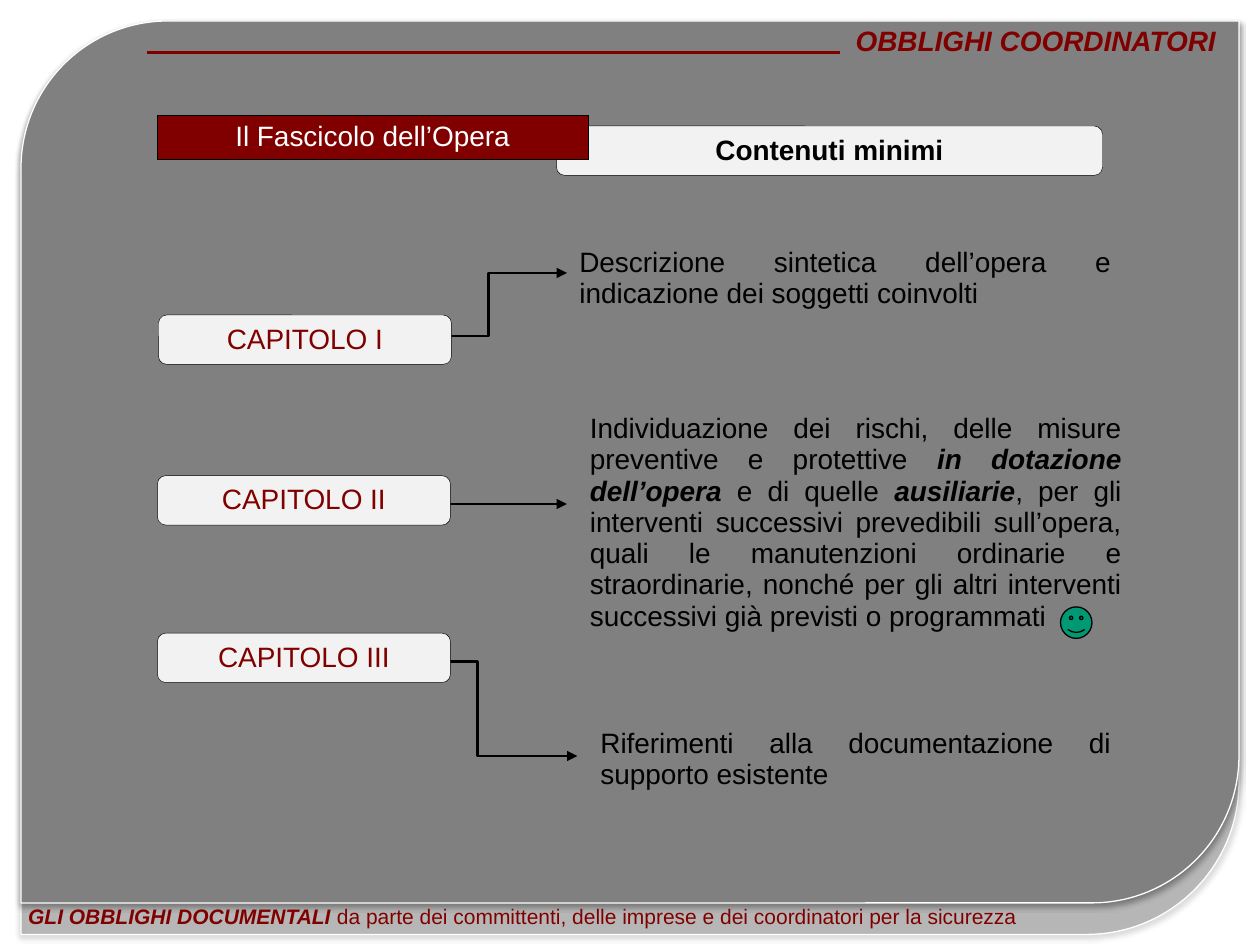
from lxml import etree
from pptx import Presentation
from pptx.dml.color import RGBColor
from pptx.enum.shapes import MSO_CONNECTOR as LINK, MSO_SHAPE as SHAPE
from pptx.enum.text import MSO_ANCHOR as ANCHOR, MSO_AUTO_SIZE as AUTO, PP_ALIGN as ALIGN
from pptx.oxml import parse_xml
from pptx.oxml.ns import nsdecls, qn
from pptx.util import Inches, Pt

CELL = Inches(1) // 12  # grid of 120 columns by 90 rows
RED, BLACK, WHITE, PALE, GREY = "800000", "000000", "FFFFFF", "F2F2F2", "808080"

presentation = Presentation()
presentation.slide_width, presentation.slide_height = 120 * CELL, 90 * CELL
slide = presentation.slides.add_slide(presentation.slide_layouts[6])
shapes = slide.shapes


def add_block(kind, box, fill=None, line=BLACK, width=0.25):
    """Add a preset shape, or a text box when kind is None, at grid units."""
    frame = [round(value * CELL) for value in box]
    if kind is None:
        return shapes.add_textbox(*frame)
    shape = shapes.add_shape(kind, *frame)
    shape.shadow.inherit = False
    shape.fill.solid()
    shape.fill.fore_color.rgb = RGBColor.from_string(fill)
    shape.line.color.rgb = RGBColor.from_string(line)
    shape.line.width = Pt(width)
    return shape


def write(shape, parts, color, size=16, align=ALIGN.CENTER, anchor=ANCHOR.MIDDLE):
    """Fill a shape with one paragraph of (text, bold, italic) parts."""
    text_frame = shape.text_frame
    text_frame.word_wrap = True
    text_frame.auto_size = AUTO.SHAPE_TO_FIT_TEXT
    text_frame.vertical_anchor = anchor
    paragraph = text_frame.paragraphs[0]
    paragraph.alignment = align
    paragraph.line_spacing = 0.93
    for text, bold, italic in parts:
        run = paragraph.add_run()
        run.text = text
        run.font.name, run.font.size = "Arial", Pt(size)
        run.font.bold, run.font.italic = bold, italic
        run.font.color.rgb = RGBColor.from_string(color)


# Background panels with soft shadows, the rear one translucent
for rows, opacity in [(87, 40), (84, 100)]:
    panel = add_block(SHAPE.ROUND_2_DIAG_RECTANGLE, (2, 2, 116, rows), GREY, WHITE, 0.75)
    fill_color = panel._element.spPr.find(qn("a:solidFill"))[0]
    etree.SubElement(fill_color, qn("a:alpha")).set("val", str(opacity * 1000))
    panel._element.spPr.find(qn("a:effectLst")).append(parse_xml(
        f'<a:outerShdw {nsdecls("a")} blurRad="{Pt(3.1)}" dist="{Pt(1.8)}" dir="5400000"'
        ' rotWithShape="0"><a:srgbClr val="000000"><a:alpha val="35000"/></a:srgbClr>'
        '</a:outerShdw>'))

# Footer and heading
footer = [("GLI OBBLIGHI DOCUMENTALI ", True, True),
          ("da parte dei committenti, delle imprese e dei coordinatori per la sicurezza",
           False, False)]
heading = [("OBBLIGHI COORDINATORI", True, True)]
for box, parts, size, align in [
    ((1.5, 85.7, 104, 3.4), footer, 12, ALIGN.JUSTIFY),
    ((75, 2, 42, 4.1), heading, 16, ALIGN.RIGHT),
]:
    label = add_block(None, box)
    label.text_frame.margin_top = label.text_frame.margin_bottom = Inches(0.04)
    write(label, parts, RED, size, align)

# Title boxes
subtitle = add_block(SHAPE.ROUNDED_RECTANGLE, (53, 12, 52, 4.7), PALE)
write(subtitle, [("Contenuti minimi", True, False)], BLACK)
title = add_block(SHAPE.RECTANGLE, (15, 11, 41, 4.2), RED)
write(title, [("Il Fascicolo dell’Opera", False, False)], WHITE)

# Chapter contents
contents = [
    ((54, 23, 53, 7.2),
     [("Descrizione sintetica dell’opera e indicazione dei soggetti coinvolti", False, False)]),
    ((55, 38.8, 53, 22.3),
     [("Individuazione dei rischi, delle misure preventive e protettive ", False, False),
      ("in dotazione dell’opera", True, True),
      (" e di quelle ", False, False),
      ("ausiliarie", True, True),
      (", per gli interventi successivi prevedibili sull’opera, quali le manutenzioni "
       "ordinarie e straordinarie, nonché per gli altri interventi successivi già "
       "previsti o programmati", False, False)]),
    ((56, 68.8, 51, 7.2),
     [("Riferimenti alla documentazione di supporto esistente", False, False)]),
]
for box, parts in contents:
    write(add_block(None, box), parts, BLACK, align=ALIGN.JUSTIFY, anchor=ANCHOR.TOP)
add_block(SHAPE.SMILEY_FACE, (101, 57.8, 3, 3), "009973", width=0.75)

# Heading rule and chapter arrows
for kind, ends, color, width, arrow in [
    (LINK.STRAIGHT, (80, 5, 14, 5), RED, 2, False),
    (LINK.ELBOW, (39, 32, 54, 26), BLACK, 1.5, True),
    (LINK.STRAIGHT, (36, 48, 54, 48), BLACK, 1.5, True),
    (LINK.ELBOW, (36, 63, 55, 72), BLACK, 1.5, True),
]:
    connector = shapes.add_connector(kind, *[value * CELL for value in ends])
    connector.line.color.rgb = RGBColor.from_string(color)
    connector.line.width = Pt(width)
    if arrow:
        etree.SubElement(connector.line._get_or_add_ln(), qn("a:tailEnd")).set("type", "triangle")
    etree.SubElement(connector._element.spPr, qn("a:effectLst"))

# Chapter boxes, over the arrow starts
for numeral, left, top in [("I", 15.1, 30), ("II", 15, 45.3), ("III", 15, 60.3)]:
    chapter = add_block(SHAPE.ROUNDED_RECTANGLE, (left, top, 27.9, 4.7), PALE)
    write(chapter, [(f"CAPITOLO {numeral}", False, False)], RED)

presentation.save("out.pptx")
